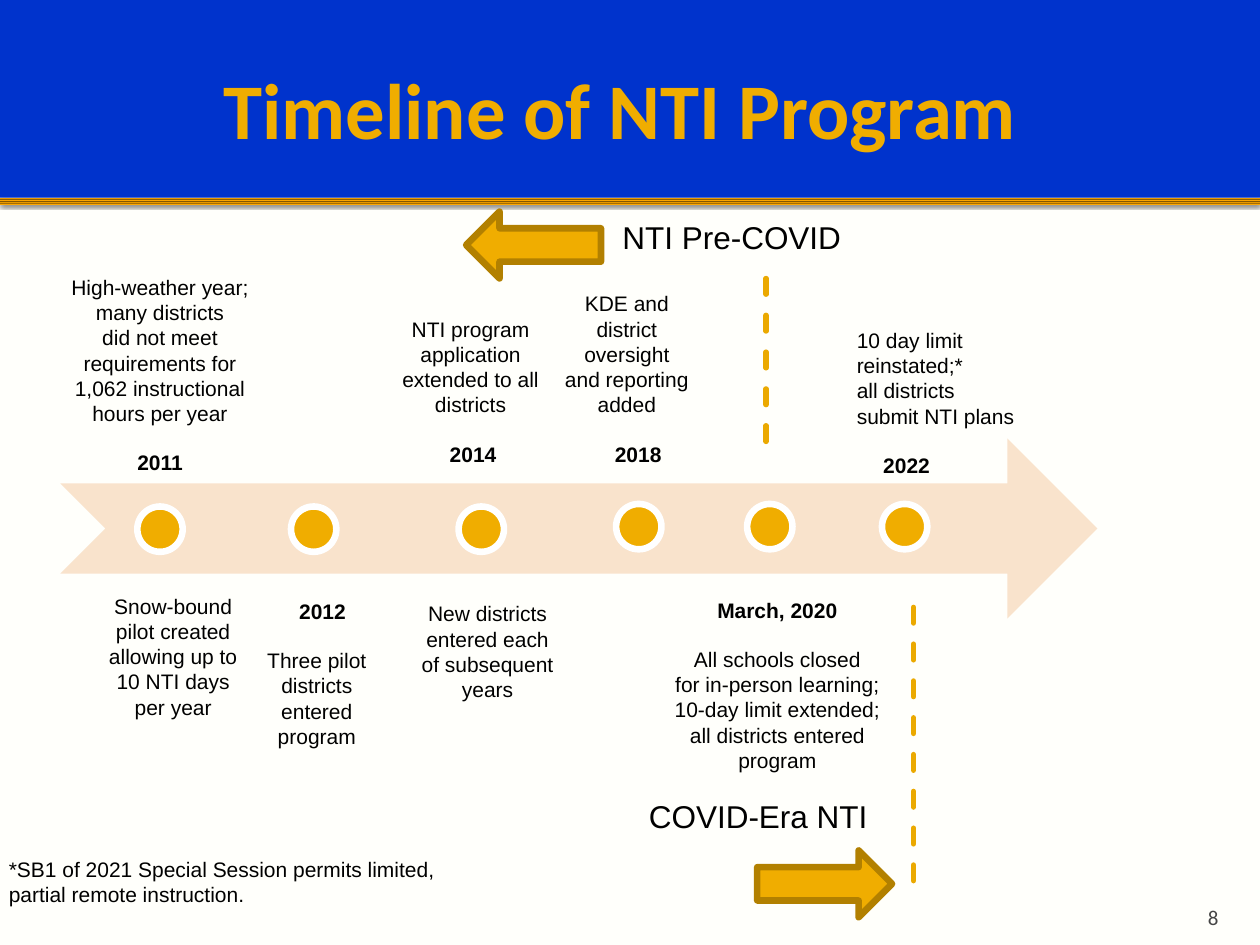
from lxml import etree
from pptx import Presentation
from pptx.dml.color import RGBColor
from pptx.enum.dml import MSO_LINE
from pptx.enum.shapes import MSO_CONNECTOR, MSO_SHAPE
from pptx.enum.text import MSO_ANCHOR, PP_ALIGN
from pptx.oxml import parse_xml
from pptx.util import Inches, Pt

LEFT, MID, RIGHT = PP_ALIGN.LEFT, PP_ALIGN.CENTER, PP_ALIGN.RIGHT
NS = "http://schemas.openxmlformats.org/drawingml/2006/main"
HEX = {
    "paper": "FFFFFB", "blue": "0033CC", "gold": "F0AD00", "edge": "B28000",
    "dash": "EBA900", "peach": "F9E3CC", "white": "FFFFFF",
    "black": "000000", "gray": "454545", "dark": "825600", "light": "FFA800",
}
COLOR = {name: RGBColor.from_string(code) for name, code in HEX.items()}

deck = Presentation()
deck.slide_width, deck.slide_height = Inches(10), Inches(7.5)
slide = deck.slides.add_slide(deck.slide_layouts[5])
slide.background.fill.solid()
slide.background.fill.fore_color.rgb = COLOR["paper"]
shapes = slide.shapes


def add_form(kind, box, fill, line=None):
    form = shapes.add_shape(kind, *map(Inches, box))
    form.shadow.inherit = False
    form.fill.solid()
    form.fill.fore_color.rgb = COLOR[fill]
    if line:
        form.line.color.rgb = COLOR[line]
        form.line.width = Pt(3.78)
    else:
        form.line.fill.background()
    return form


def add_text(box, lines, size=12, align=MID, font="Arial", color="black"):
    frame = shapes.add_textbox(*map(Inches, box)).text_frame
    frame.word_wrap = True
    frame.margin_left = frame.margin_right = 0
    frame.text = "\n".join(lines)
    for para in frame.paragraphs:
        para.alignment = align
        para.font.size = Pt(size)
        para.font.name = font
        para.font.color.rgb = COLOR[color]
    return frame


# Header: striped rule with a soft shadow, blue band, title
rule = add_form(MSO_SHAPE.RECTANGLE, (0, 1.57, 10, 0.05), "gold")
stops = "".join(
    f'<a:gs pos="{pos * 1000}"><a:srgbClr val="{HEX["light" if i % 2 else "dark"]}"/></a:gs>'
    for i, pos in enumerate((0, 13, 28, 43, 58, 72, 87, 100)))
props = rule._element.spPr
props.replace(props.find(f"{{{NS}}}solidFill"), parse_xml(
    f'<a:gradFill xmlns:a="{NS}"><a:gsLst>{stops}</a:gsLst>'
    '<a:lin ang="5400000" scaled="0"/></a:gradFill>'))
props.replace(props.find(f"{{{NS}}}effectLst"), parse_xml(
    f'<a:effectLst xmlns:a="{NS}"><a:outerShdw blurRad="31750" dist="10160" dir="5400000">'
    '<a:srgbClr val="000000"><a:alpha val="60000"/></a:srgbClr>'
    '</a:outerShdw></a:effectLst>'))
add_form(MSO_SHAPE.RECTANGLE, (0, 0, 10, 1.57), "blue")

title = shapes.title
title.left, title.top, title.width, title.height = map(Inches, (0.42, 0.17, 9, 1.37))
title.text_frame.text = "Timeline of NTI Program"
title.text_frame.vertical_anchor = MSO_ANCHOR.MIDDLE
head = title.text_frame.paragraphs[0]
head.alignment = MID
font = head.runs[0].font
font.name, font.size, font.bold = "Calibri", Pt(45), True
font.color.rgb = COLOR["gold"]
shapes._spTree.append(title._element)  # in front of the band

# Time arrow and its dots
add_form(MSO_SHAPE.NOTCHED_RIGHT_ARROW, (0.48, 3.48, 8.23, 1.43), "peach")
for x, y in ((1.09, 4.02), (2.31, 4.02), (3.64, 4.02), (4.89, 4), (5.93, 4), (7, 4)):
    add_form(MSO_SHAPE.OVAL, (x, y, 0.36, 0.36), "gold", "white")

# Events above the arrow: text, then year (box, lines, year, year indent)
above = [
    ((0.36, 2.13, 1.82, 1.72),
     ["High-weather year;", "many districts", "did not meet", "requirements for",
      "1,062 instructional", "hours per year"], "2011", 0),
    ((3.12, 2.46, 1.23, 1.31),
     ["NTI program application", "extended to all districts"], "2014", 0.04),
    ((4.3, 2.26, 1.35, 1.51),
     ["KDE and", "district", "oversight", "and reporting", "added"], "2018", 0.18),
    ((6.25, 2.55, 1.89, 1.53),
     ["10 day limit", "reinstated;*", "all districts", "submit NTI plans"], "2022", 0),
]
# Events below the arrow: year, then text
below = [
    ((5.2, 4.69, 1.94, 1.92),
     ["All schools closed", "for in-person learning;", "10-day limit extended;",
      "all districts entered", "program"], "March, 2020", 0),
    ((1.8, 4.7, 1.43, 1.62),
     ["Three pilot", "districts", "entered", "program"], "2012", 0.09),
]
for box, lines, year, shift in above + below:
    top = (box, lines, year, shift) in above
    frame = add_text(box, lines + [year] if top else [year] + lines)
    label = frame.paragraphs[-1 if top else 0]
    label.font.bold = True
    label._p.get_or_add_pPr().set("marL", str(Inches(shift)))
    if top:
        label.space_before = Pt(13.8)
    else:
        label.space_after = Pt(13.8)
    if year == "2022":
        for para in frame.paragraphs[:-1]:
            para.alignment = LEFT
            para._p.get_or_add_pPr().set("marL", str(Inches(0.55)))

# Notes without a year
add_text((0.71, 4.66, 1.33, 1.11),
         ["Snow-bound", "pilot created", "allowing up to", "10 NTI days", "per year"])
add_text((3.17, 4.72, 1.4, 0.91),
         ["New districts", "entered each", "of subsequent", "years"])
add_text((0.07, 6.75, 3.65, 0.81),
         ["*SB1 of 2021 Special Session permits limited,", "partial remote instruction."],
         align=LEFT)

# Eras: labels, block arrows, dashed limits
add_text((4.94, 1.68, 1.96, 0.4), ["NTI Pre-COVID"], 18, LEFT)
add_text((5.15, 6.28, 1.96, 0.4), ["COVID-Era NTI"], 18, LEFT)
add_form(MSO_SHAPE.LEFT_ARROW, (3.7, 1.68, 1.07, 0.53), "gold", "edge")
add_form(MSO_SHAPE.RIGHT_ARROW, (6.01, 6.75, 1.07, 0.53), "gold", "edge")
for x, y, end in ((6.08, 2.21, 3.58), (7.25, 4.82, 7.08)):
    limit = shapes.add_connector(MSO_CONNECTOR.STRAIGHT, *map(Inches, (x, y, x, end)))
    limit.line.color.rgb = COLOR["dash"]
    limit.line.width = Pt(3)
    limit.line.dash_style = MSO_LINE.DASH
    limit.line._get_or_add_ln().set("cap", "rnd")
    etree.SubElement(limit._element.spPr, f"{{{NS}}}effectLst")

# Page number
page = add_text((8.97, 7.08, 0.7, 0.3), ["8"], 12, RIGHT, "Calibri", "gray")
page.vertical_anchor = MSO_ANCHOR.BOTTOM
page.margin_bottom = 0

deck.save("out.pptx")
